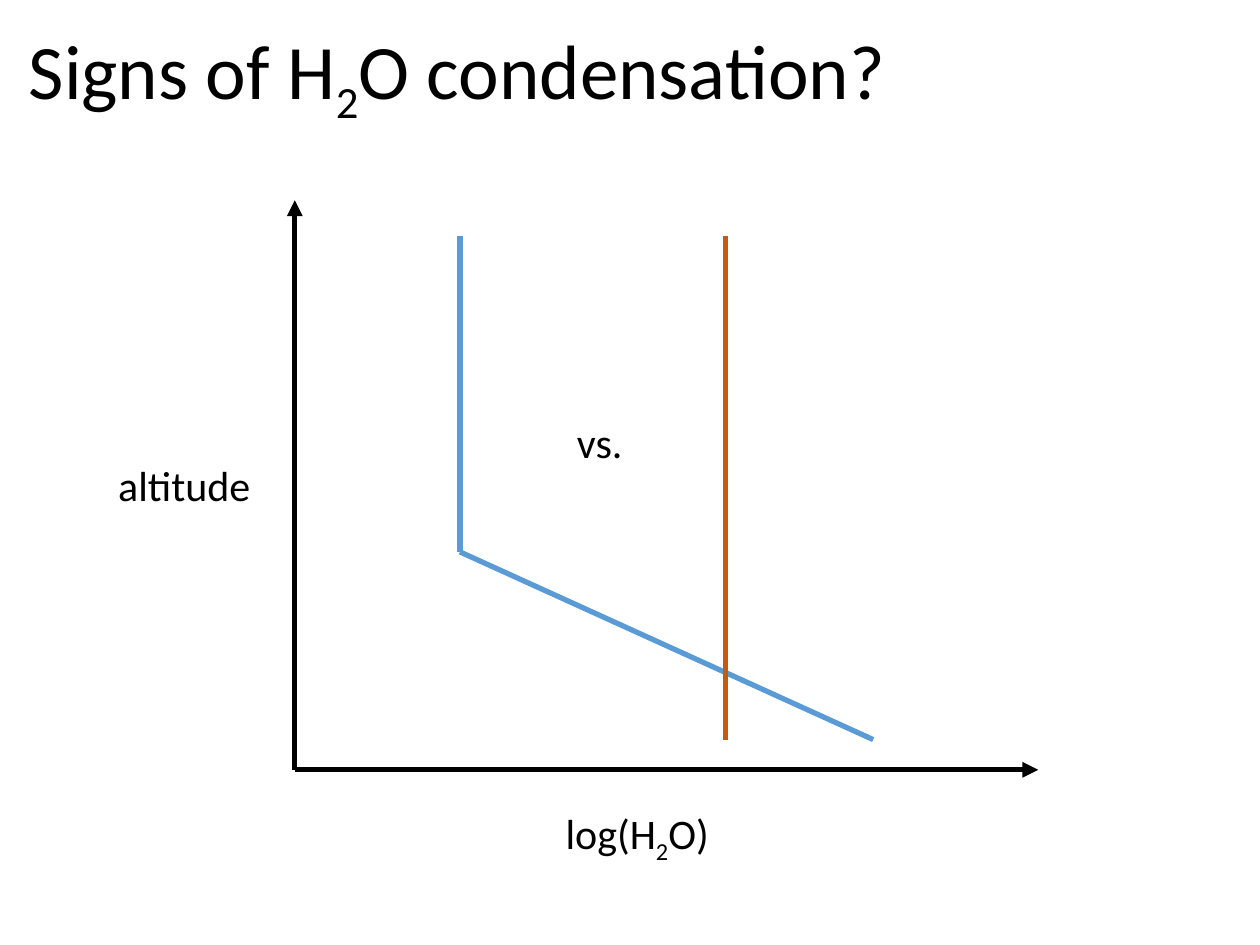
from lxml.etree import SubElement
from pptx import Presentation
from pptx.dml.color import RGBColor
from pptx.enum.shapes import MSO_CONNECTOR
from pptx.enum.text import MSO_ANCHOR, MSO_AUTO_SIZE
from pptx.oxml.ns import qn
from pptx.util import Inches, Pt

BLACK = RGBColor(0x00, 0x00, 0x00)
BLUE = RGBColor(0x5B, 0x9B, 0xD5)
ORANGE = RGBColor(0xC5, 0x5A, 0x11)


def add_text(s, text, left, top, width, height, size=24, wrap=False,
             anchor=MSO_ANCHOR.TOP, spacing=None):
    """Add a text box; parts between underscores become subscripts."""
    sp = s.shapes.add_textbox(Inches(left), Inches(top), Inches(width), Inches(height))
    tf = sp.text_frame
    tf.word_wrap = wrap
    tf.auto_size = MSO_AUTO_SIZE.NONE if wrap else MSO_AUTO_SIZE.SHAPE_TO_FIT_TEXT
    tf.vertical_anchor = anchor
    p = tf.paragraphs[0]
    if spacing:
        p.line_spacing = spacing
    for i, part in enumerate(text.split("_")):
        r = p.add_run()
        r.text = part
        r.font.name = "Calibri"
        r.font.size = Pt(size)
        r.font.color.rgb = BLACK
        if i % 2:
            r._r.get_or_add_rPr().set("baseline", "-25000")
    return sp


def add_line(s, x1, y1, x2, y2, color=BLACK, arrow=False):
    """Add a straight 3 pt line, with an optional arrowhead at its end."""
    sp = s.shapes.add_connector(MSO_CONNECTOR.STRAIGHT, Inches(x1), Inches(y1),
                                Inches(x2), Inches(y2))
    sp.line.color.rgb = color
    sp.line.width = Pt(3)
    if arrow:
        SubElement(sp.line._get_or_add_ln(), qn("a:tailEnd"), type="triangle")
    SubElement(sp._element.spPr, qn("a:effectLst"))
    return sp


def add_title(s, left, top, width, height):
    """Place the slide title in the given box."""
    add_text(s, "Signs of H_2_O condensation?", left, top, width, height, size=44,
             wrap=True, anchor=MSO_ANCHOR.MIDDLE, spacing=0.9)


def add_profile_plot(s, left, top, width, height):
    """Place axes, labels and both water profiles around the plot box."""
    bottom = top + height
    line_top, line_bottom = top + 0.28, bottom - 0.24
    bend_x, bend_y = left + 1.31, top + 2.79
    constant_x = left + 3.42

    add_line(s, left, bottom, left, top, arrow=True)
    add_line(s, left, bottom, left + width, bottom, arrow=True)
    add_text(s, "altitude", left - 1.5, top + 2.01, 1.26, 0.5)
    add_text(s, "log(H_2_O)", left + 2.05, bottom + 0.25, 1.36, 0.5)

    add_line(s, left + 4.59, line_bottom, bend_x, bend_y, BLUE)
    add_line(s, bend_x, line_top, bend_x, bend_y, BLUE)
    add_line(s, constant_x, line_top, constant_x, line_bottom, ORANGE)
    add_text(s, "vs.", left + 2.14, top + 1.67, 0.57, 0.5)


def main():
    """Build and save the slide."""
    prs = Presentation()
    prs.slide_width, prs.slide_height = Inches(10), Inches(7.5)
    s = prs.slides.add_slide(prs.slide_layouts[6])
    add_title(s, 0.13, -0.16, 8.62, 1.45)
    add_profile_plot(s, 2.34, 1.59, 5.9, 4.52)
    prs.save("out.pptx")


if __name__ == "__main__":
    main()
